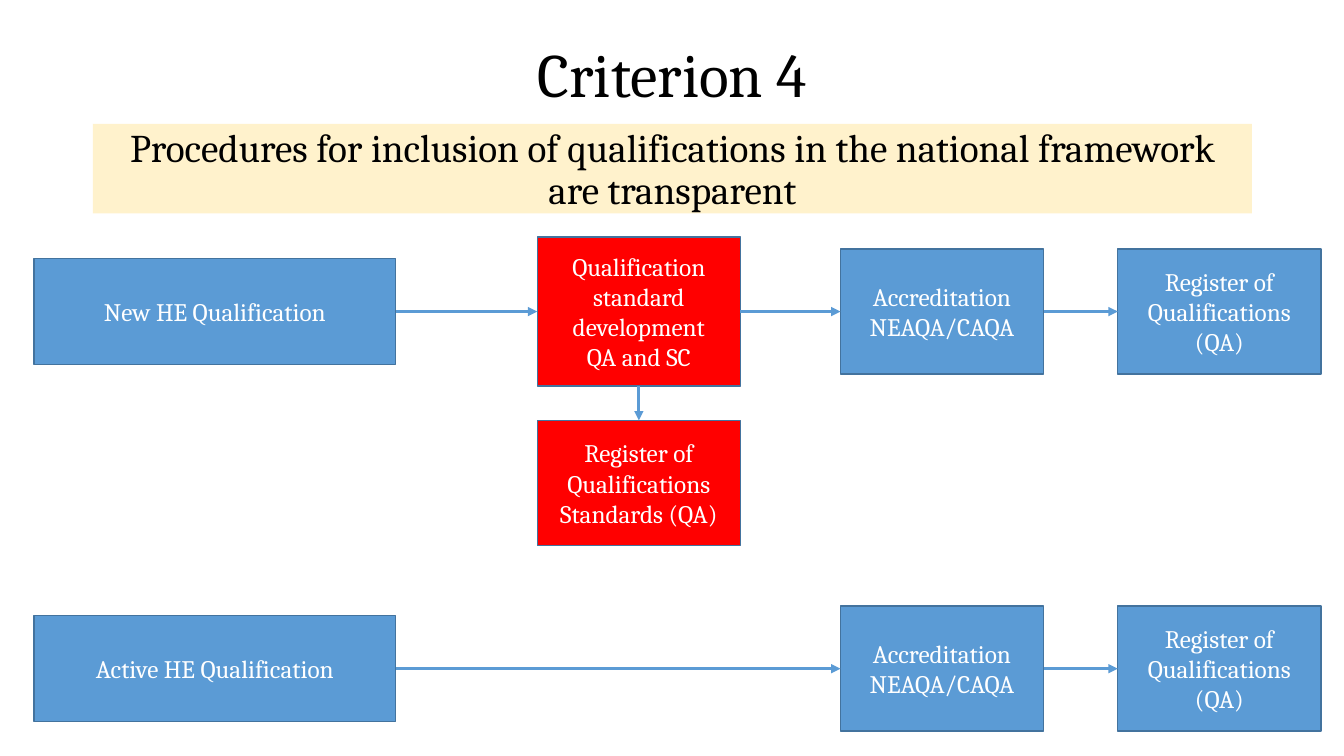
from pptx import Presentation
from pptx.dml.color import RGBColor
from pptx.enum.shapes import MSO_CONNECTOR as Connector, MSO_SHAPE as Shape
from pptx.enum.text import MSO_ANCHOR as Anchor, PP_ALIGN as Align
from pptx.oxml.ns import qn
from pptx.util import Cm, Pt
from lxml.etree import SubElement

BLACK = RGBColor(0x00, 0x00, 0x00)
WHITE = RGBColor(0xFF, 0xFF, 0xFF)
BLUE = RGBColor(0x5B, 0x9B, 0xD5)
DARK_BLUE = RGBColor(0x43, 0x73, 0x9E)
RED = RGBColor(0xFF, 0x00, 0x00)
CREAM = RGBColor(0xFF, 0xF2, 0xCC)

# Lengths in centimetres
START_LEFT, STANDARD_LEFT, ACCREDITATION_LEFT, REGISTER_LEFT = 0.86, 13.54, 21.18, 28.17
NEW_ROW, STANDARDS_ROW, ACTIVE_ROW = 7.85, 12.17, 16.85
START_SIZE, STEP_SIZE, TALL_SIZE = (9.11, 2.67), (5.12, 3.15), (5.12, 3.76)
HEADING_LEFT, HEADING_WIDTH = 2.34, 29.21
TOP, LEFT, BOTTOM, RIGHT = range(4)  # connection sites of a rectangle


def write(shape, text, size=18, color=WHITE, anchor=Anchor.MIDDLE, spacing=1.0):
    """Fill a shape with centred text, one paragraph per line."""
    frame = shape.text_frame
    frame.word_wrap = True
    frame.vertical_anchor = anchor
    frame.text = text
    for para in frame.paragraphs:
        para.alignment = Align.CENTER
        para.line_spacing = spacing
        para.font.name = "Cambria"
        para.font.size = Pt(size)
        para.font.color.rgb = color


class FlowPage:
    def __init__(self, page):
        self.shapes = page.shapes

    def title(self, text, top, height):
        box = self.shapes.add_textbox(Cm(HEADING_LEFT), Cm(top), Cm(HEADING_WIDTH), Cm(height))
        write(box, text, size=44, color=BLACK, spacing=0.9)

    def rectangle(self, left, top, width, height, fill):
        box = self.shapes.add_shape(Shape.RECTANGLE, Cm(left), Cm(top), Cm(width), Cm(height))
        box.shadow.inherit = False
        box.fill.solid()
        box.fill.fore_color.rgb = fill
        return box

    def banner(self, text, top, height):
        box = self.rectangle(HEADING_LEFT, top, HEADING_WIDTH, height, CREAM)
        box.line.fill.background()
        write(box, text, size=28, color=BLACK, anchor=Anchor.TOP, spacing=0.9)

    def step(self, text, left, middle, size=STEP_SIZE, fill=BLUE):
        """Add a process box centred vertically on middle."""
        width, height = size
        box = self.rectangle(left, middle - height / 2, width, height, fill)
        box.line.color.rgb = DARK_BLUE
        box.line.width = Pt(1)
        write(box, text)
        return box

    def arrow(self, source, target, from_site=RIGHT, to_site=LEFT):
        arrow = self.shapes.add_connector(Connector.STRAIGHT, 0, 0, 0, 0)
        arrow.begin_connect(source, from_site)
        arrow.end_connect(target, to_site)
        arrow.line.color.rgb = BLUE
        arrow.line.width = Pt(2.25)
        SubElement(arrow.line._get_or_add_ln(), qn("a:tailEnd"), type="triangle")
        SubElement(arrow._element.spPr, qn("a:effectLst"))

    def approval(self, source, middle):
        """Lead from source through accreditation to the register."""
        accreditation = self.step("Accreditation\nNEAQA/CAQA", ACCREDITATION_LEFT, middle)
        register = self.step("Register of Qualifications\n(QA)", REGISTER_LEFT, middle)
        self.arrow(source, accreditation)
        self.arrow(accreditation, register)


def main():
    deck = Presentation()
    deck.slide_width, deck.slide_height = Cm(33.87), Cm(19.05)
    page = FlowPage(deck.slides.add_slide(deck.slide_layouts[6]))

    page.title("Criterion 4", top=1.02, height=1.85)
    page.banner("Procedures for inclusion of qualifications in the national framework "
                "are transparent", top=3.12, height=2.26)

    new = page.step("New HE Qualification", START_LEFT, NEW_ROW, START_SIZE)
    standard = page.step("Qualification standard development\nQA and SC",
                         STANDARD_LEFT, NEW_ROW, TALL_SIZE, RED)
    standards_register = page.step("Register of Qualifications\nStandards (QA)",
                                   STANDARD_LEFT, STANDARDS_ROW, fill=RED)
    page.arrow(new, standard)
    page.arrow(standard, standards_register, BOTTOM, TOP)
    page.approval(standard, NEW_ROW)

    active = page.step("Active HE Qualification", START_LEFT, ACTIVE_ROW, START_SIZE)
    page.approval(active, ACTIVE_ROW)

    deck.save("out.pptx")


if __name__ == "__main__":
    main()
